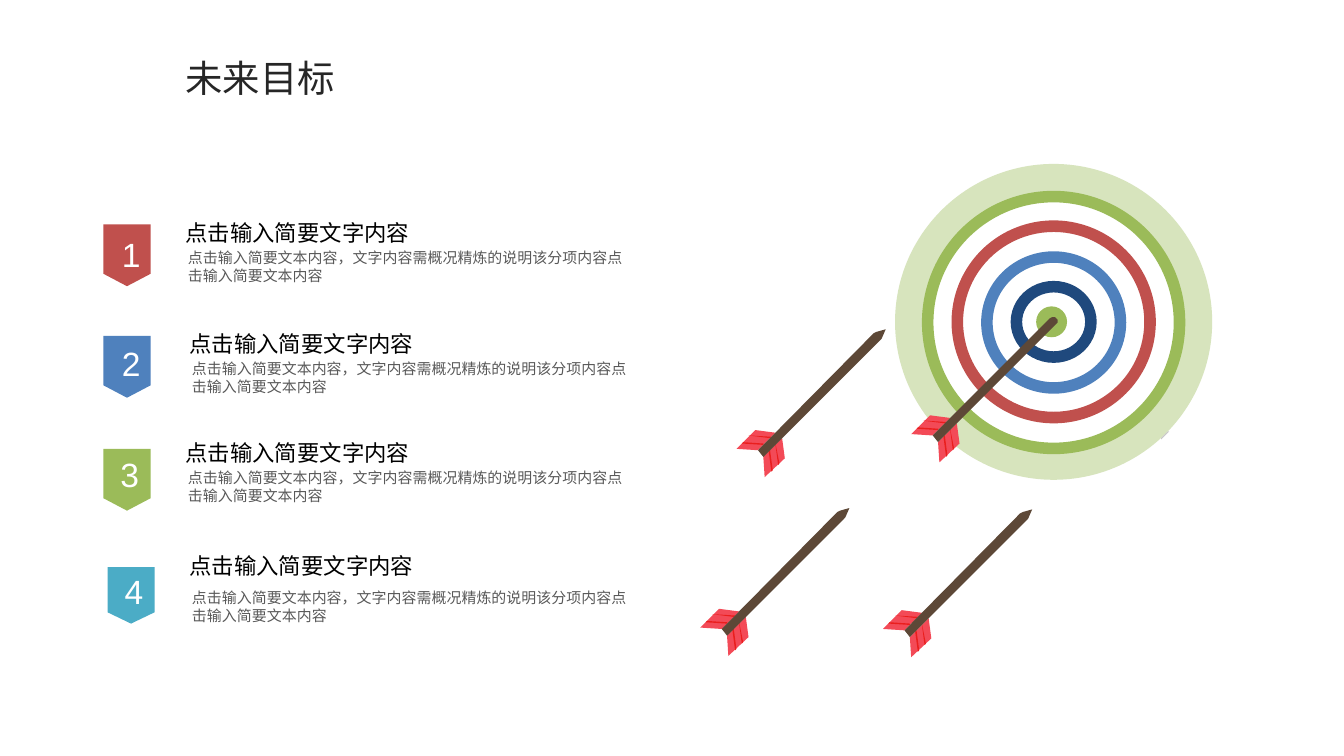
"""Build the future goals slide with four numbered points, a target and arrows."""
import dataclasses

import lxml.etree
import pptx
import pptx.dml.color
import pptx.enum.shapes
import pptx.enum.text
import pptx.oxml.ns
import pptx.util

SCALE = 9144
SHAPE = pptx.enum.shapes.MSO_SHAPE
ANCHOR = pptx.enum.text.MSO_ANCHOR
ALIGN = pptx.enum.text.PP_ALIGN
AUTO_SIZE = pptx.enum.text.MSO_AUTO_SIZE


@dataclasses.dataclass(frozen=True)
class Theme:
    cjk: str = "Noto Sans CJK SC"
    latin: str = "Arial"
    title: str = "262626"
    heading: str = "000000"
    body: str = "595959"
    white: str = "FFFFFF"
    red: str = "C0504D"
    blue: str = "4F81BD"
    green: str = "9BBB59"
    teal: str = "4BACC6"
    navy: str = "1F497D"
    pale_green: str = "D7E4BD"
    feather: str = "F34A57"
    barb: str = "EA1E1D"
    shaft: str = "5D4837"
    glint: str = "C9C8C8"
    title_size: int = 20
    number_size: int = 18
    heading_size: int = 12
    body_size: int = 8


THEME = Theme()
HEADING = "点击输入简要文字内容"
BODY = "点击输入简要文本内容，文字内容需概况精炼的说明该分项内容点击输入简要文本内容"

ITEMS = [
    ("1", THEME.red, (77, 167, 46), (75, 166), (138, 163), (130, 180, 50)),
    ("2", THEME.blue, (77, 250, 46), (75, 247), (141, 246), (133, 263, 50)),
    ("3", THEME.green, (77, 334, 46), (74, 330), (138, 327), (130, 344, 50)),
    ("4", THEME.teal, (80, 422, 42), (77, 417), (141, 411), (133, 433, 45)),
]

FEATHERS = [
    [(18, 81), (20, 96), (5, 110), (4, 95)],
    [(13, 77), (-2, 75), (-16, 89), (0, 90)],
]
BARBS = [
    [(13, 85), (16, 100), (15, 101), (13, 86)],
    [(9, 90), (11, 105), (10, 106), (8, 91)],
    [(-11, 84), (4, 85), (4, 86), (-12, 85)],
    [(-6, 79), (10, 80), (9, 81), (-7, 79)],
]
SHAFT_END = [(91, 8), (4, 95), (0, 90)]
POINTED_TIP = [(86, 3), (88, 2), (95, 0), (92, 7)]
ROUND_TIP = [(87, 3), (89, 2), (91, 2), (93, 4), (93, 6)]


def px(value):
    return pptx.util.Emu(value * SCALE)


def paint(s, color):
    s.shadow.inherit = False
    s.line.fill.background()
    if color:
        s.fill.solid()
        s.fill.fore_color.rgb = pptx.dml.color.RGBColor.from_string(color)
    else:
        s.fill.background()


def add_preset(slide, kind, box, color=None):
    s = slide.shapes.add_shape(kind, *map(px, box))
    paint(s, color)
    return s


def add_outline(slide, points, color, origin=(0, 0)):
    moved = [(x + origin[0], y + origin[1]) for x, y in points]
    builder = slide.shapes.build_freeform(*moved[0], scale=SCALE)
    builder.add_line_segments(moved[1:], close=True)
    paint(builder.convert_to_shape(), color)


def write(s, text, size, color, font, align=ALIGN.LEFT):
    p = s.text_frame.paragraphs[0]
    p.alignment = align
    r = p.add_run()
    r.text = text
    r.font.size = pptx.util.Pt(size)
    r.font.name = font
    r.font.color.rgb = pptx.dml.color.RGBColor.from_string(color)
    ea = lxml.etree.SubElement(r.font._element, pptx.oxml.ns.qn("a:ea"))
    ea.set("typeface", font)


def fit_line(s, side, top):
    tf = s.text_frame
    tf.word_wrap = False
    tf.auto_size = AUTO_SIZE.SHAPE_TO_FIT_TEXT
    tf.vertical_anchor = ANCHOR.TOP
    tf.margin_left = tf.margin_right = px(side)
    tf.margin_top = tf.margin_bottom = px(top)


def add_title(slide):
    s = slide.shapes.title
    s.left, s.top, s.width, s.height = map(px, (130, 37, 129, 41))
    fit_line(s, 8, 4)
    write(s, "未来目标", THEME.title_size, THEME.title, THEME.cjk)


def add_item(slide, number, color, badge, label, heading, body):
    x, y, height = badge
    add_preset(slide, SHAPE.FLOWCHART_OFFPAGE_CONNECTOR, (x, y, 35, height), color)
    s = add_preset(slide, SHAPE.OVAL, (*label, 40, 46))
    s.text_frame.vertical_anchor = ANCHOR.MIDDLE
    write(s, number, THEME.number_size, THEME.white, THEME.latin, ALIGN.CENTER)

    s = slide.shapes.add_textbox(*map(px, (*heading, 168, 20)))
    fit_line(s, 0, 0)
    write(s, HEADING, THEME.heading_size, THEME.heading, THEME.cjk)

    x, y, height = body
    s = slide.shapes.add_textbox(*map(px, (x, y, 353, height)))
    s.text_frame.word_wrap = True
    write(s, BODY, THEME.body_size, THEME.body, THEME.cjk)


def add_target(slide):
    add_preset(slide, SHAPE.OVAL, (666, 122, 236, 235), THEME.pale_green)
    add_preset(slide, SHAPE.OVAL, (690, 146, 187, 187), THEME.white)
    for i, color in enumerate((THEME.green, THEME.red, THEME.blue, THEME.navy)):
        width, height = 196 - 44 * i, 196 - 45 * i
        box = (784 - width // 2, 239 - (height - 1) // 2, width, height)
        s = add_preset(slide, SHAPE.DONUT, box, color)
        s.adjustments[0] = 8.6 / height
    add_preset(slide, SHAPE.OVAL, (771, 228, 23, 23), THEME.green)
    add_outline(slide, [(869, 321), (870, 321), (864, 327), (864, 326)], THEME.glint)


def add_arrow(slide, origin, tip):
    for points in FEATHERS:
        add_outline(slide, points, THEME.feather, origin)
    for points in BARBS:
        add_outline(slide, points, THEME.barb, origin)
    add_outline(slide, tip + SHAFT_END, THEME.shaft, origin)


def main():
    prs = pptx.Presentation()
    prs.slide_width = px(1000)
    prs.slide_height = prs.slide_width * 9 // 16
    slide = prs.slides.add_slide(prs.slide_layouts[5])
    add_title(slide)
    for origin in ((537, 378), (564, 245), (673, 379)):
        add_arrow(slide, origin, POINTED_TIP)
    add_target(slide)
    add_arrow(slide, (694, 234), ROUND_TIP)
    for item in ITEMS:
        add_item(slide, *item)
    prs.save("out.pptx")


if __name__ == "__main__":
    main()
